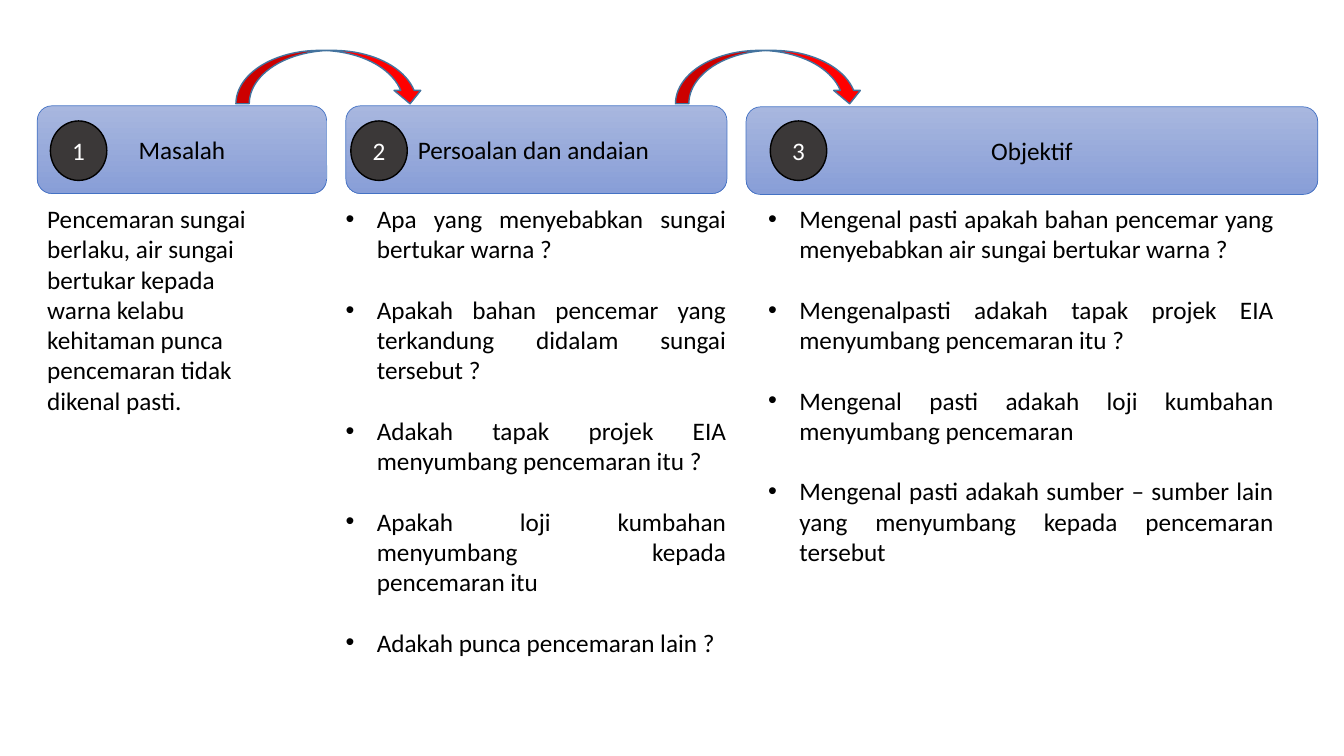
from dataclasses import dataclass

from lxml.etree import SubElement
from pptx import Presentation
from pptx.dml.color import RGBColor
from pptx.enum.shapes import MSO_SHAPE
from pptx.enum.text import MSO_ANCHOR, PP_ALIGN
from pptx.oxml.ns import qn
from pptx.shapes.autoshape import Shape
from pptx.slide import Slide
from pptx.util import Inches, Pt


@dataclass(frozen=True)
class Theme:
    font: str = "Calibri"
    size: float = 18
    paragraph_gap: float = 21.6
    text: str = "000000"
    badge_text: str = "FFFFFF"
    badge_fill: str = "3B3838"
    badge_line: str = "000000"
    header_top: str = "A8B7DF"
    header_bottom: str = "889ED7"
    header_line: str = "4472C4"
    arrow_fill: str = "FF0000"
    arrow_line: str = "43739E"


@dataclass(frozen=True)
class Box:
    left: float
    top: float
    width: float
    height: float


@dataclass(frozen=True)
class Stage:
    title: str
    header: Box
    badge_left: float
    body: Box
    items: tuple[str, ...]
    bulleted: bool = True


THEME = Theme()
BULLET_INDENT = 0.31
ARROW_LEFTS = (2.34, 6.7)

STAGES = (
    Stage(
        "Masalah", Box(0.37, 1.05, 2.87, 0.87), 0.5, Box(0.37, 1.97, 2.52, 2.22),
        (
            "Pencemaran sungai berlaku, air sungai bertukar kepada warna kelabu "
            "kehitaman punca pencemaran tidak dikenal pasti.",
        ),
        bulleted=False,
    ),
    Stage(
        "Persoalan dan andaian ", Box(3.43, 1.05, 3.78, 0.87), 3.48, Box(3.33, 1.97, 3.97, 4.95),
        (
            "Apa yang menyebabkan sungai bertukar warna ? ",
            "Apakah bahan pencemar yang terkandung didalam sungai tersebut ?",
            "Adakah tapak projek EIA menyumbang pencemaran itu ?",
            "Apakah loji kumbahan menyumbang kepada pencemaran itu ",
            "Adakah punca pencemaran lain ?",
        ),
    ),
    Stage(
        "Objektif", Box(7.4, 1.06, 5.67, 0.87), 7.64, Box(7.52, 1.97, 5.21, 4.04),
        (
            "Mengenal pasti apakah bahan pencemar yang menyebabkan air sungai bertukar warna ?",
            "Mengenalpasti adakah tapak projek EIA menyumbang pencemaran itu ?",
            "Mengenal pasti adakah loji kumbahan menyumbang pencemaran ",
            "Mengenal pasti adakah sumber – sumber lain yang menyumbang kepada pencemaran tersebut ",
        ),
    ),
)


def lengths(box: Box) -> tuple[Inches, Inches, Inches, Inches]:
    return Inches(box.left), Inches(box.top), Inches(box.width), Inches(box.height)


def set_font(paragraph, color: str) -> None:
    paragraph.font.name = THEME.font
    paragraph.font.size = Pt(THEME.size)
    paragraph.font.color.rgb = RGBColor.from_string(color)


def add_outlined(page: Slide, kind: MSO_SHAPE, box: Box, line: str, weight: float) -> Shape:
    shape = page.shapes.add_shape(kind, *lengths(box))
    shape.shadow.inherit = False
    shape.line.color.rgb = RGBColor.from_string(line)
    shape.line.width = Pt(weight)
    return shape


def fill_solid(shape: Shape, color: str) -> None:
    shape.fill.solid()
    shape.fill.fore_color.rgb = RGBColor.from_string(color)


def add_label(shape: Shape, text: str, color: str) -> None:
    frame = shape.text_frame
    frame.vertical_anchor = MSO_ANCHOR.MIDDLE
    paragraph = frame.paragraphs[0]
    paragraph.text = text
    paragraph.alignment = PP_ALIGN.CENTER
    set_font(paragraph, color)


def add_header(page: Slide, stage: Stage) -> None:
    header = add_outlined(page, MSO_SHAPE.ROUNDED_RECTANGLE, stage.header, THEME.header_line, 0.5)
    header.fill.gradient()
    header.fill.gradient_angle = 270
    for stop, color in zip(header.fill.gradient_stops, (THEME.header_top, THEME.header_bottom)):
        stop.color.rgb = RGBColor.from_string(color)
    stops = header.fill.gradient_stops
    stops[0].position, stops[1].position = 0, 1
    add_label(header, stage.title, THEME.text)


def add_badge(page: Slide, number: int, left: float) -> None:
    badge = add_outlined(page, MSO_SHAPE.OVAL, Box(left, 1.2, 0.56, 0.59), THEME.badge_line, 1)
    fill_solid(badge, THEME.badge_fill)
    add_label(badge, str(number), THEME.badge_text)


def add_bullet(paragraph) -> None:
    properties = paragraph._p.get_or_add_pPr()
    properties.set("marL", str(Inches(BULLET_INDENT)))
    properties.set("indent", str(-Inches(BULLET_INDENT)))
    SubElement(properties, qn("a:buFont")).set("typeface", "Arial")
    SubElement(properties, qn("a:buChar")).set("char", "•")
    paragraph.alignment = PP_ALIGN.JUSTIFY


def add_body(page: Slide, stage: Stage) -> None:
    frame = page.shapes.add_textbox(*lengths(stage.body)).text_frame
    frame.word_wrap = True
    for index, item in enumerate(stage.items):
        paragraph = frame.add_paragraph() if index else frame.paragraphs[0]
        paragraph.text = item
        if stage.bulleted:
            add_bullet(paragraph)
        if index:
            paragraph.space_before = Pt(THEME.paragraph_gap)
        set_font(paragraph, THEME.text)


def add_arrow(page: Slide, left: float) -> None:
    box = Box(left, 0.5, 1.86, 0.53)
    arrow = add_outlined(page, MSO_SHAPE.CURVED_DOWN_ARROW, box, THEME.arrow_line, 1)
    fill_solid(arrow, THEME.arrow_fill)


def main() -> None:
    deck = Presentation()
    deck.slide_width, deck.slide_height = Inches(13.33), Inches(7.5)
    page = deck.slides.add_slide(deck.slide_layouts[6])
    for number, stage in enumerate(STAGES, start=1):
        add_header(page, stage)
        add_body(page, stage)
        add_badge(page, number, stage.badge_left)
    for left in ARROW_LEFTS:
        add_arrow(page, left)
    deck.save("out.pptx")


if __name__ == "__main__":
    main()
